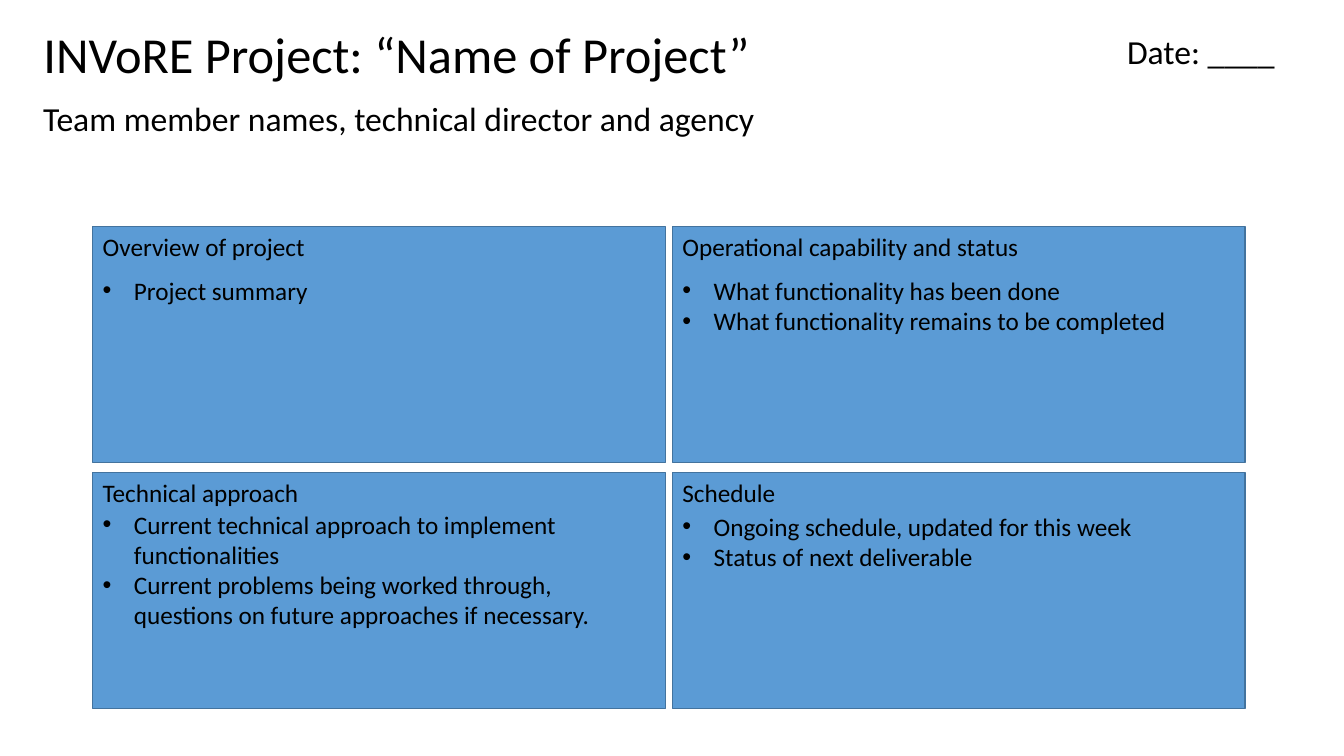
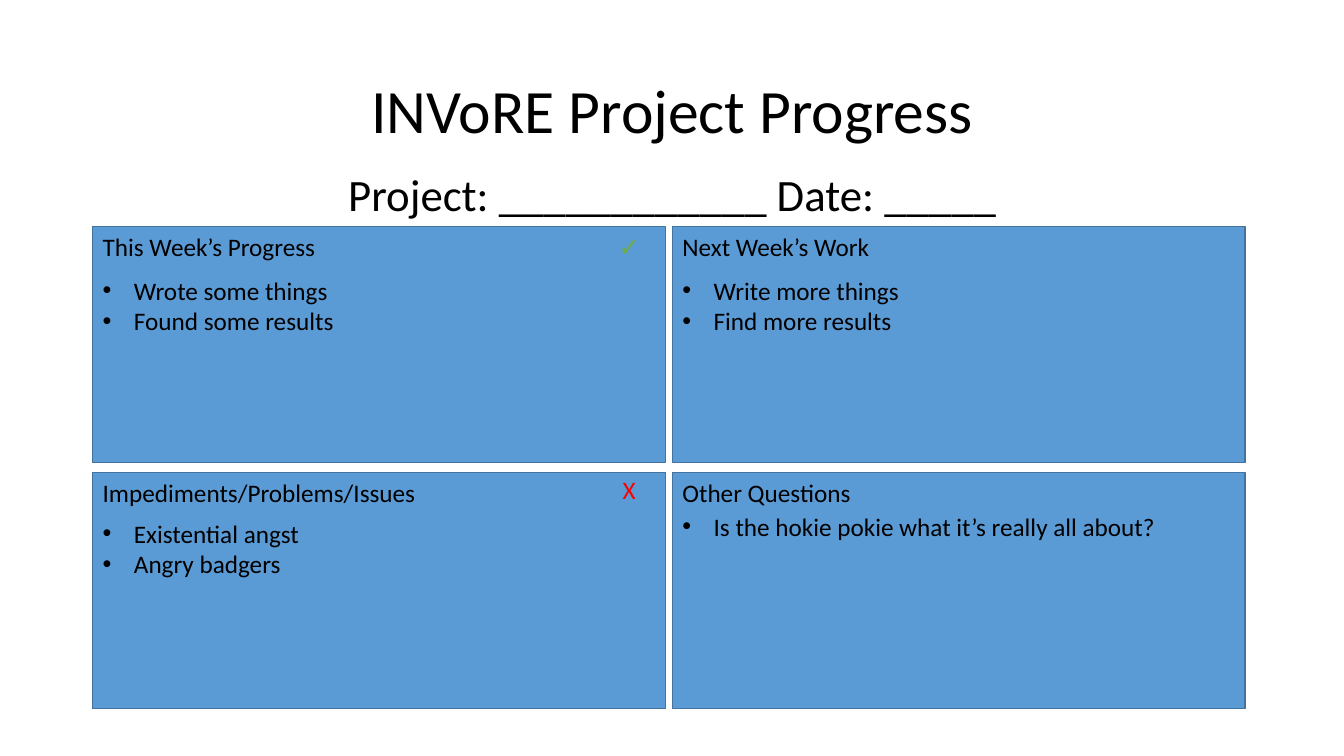
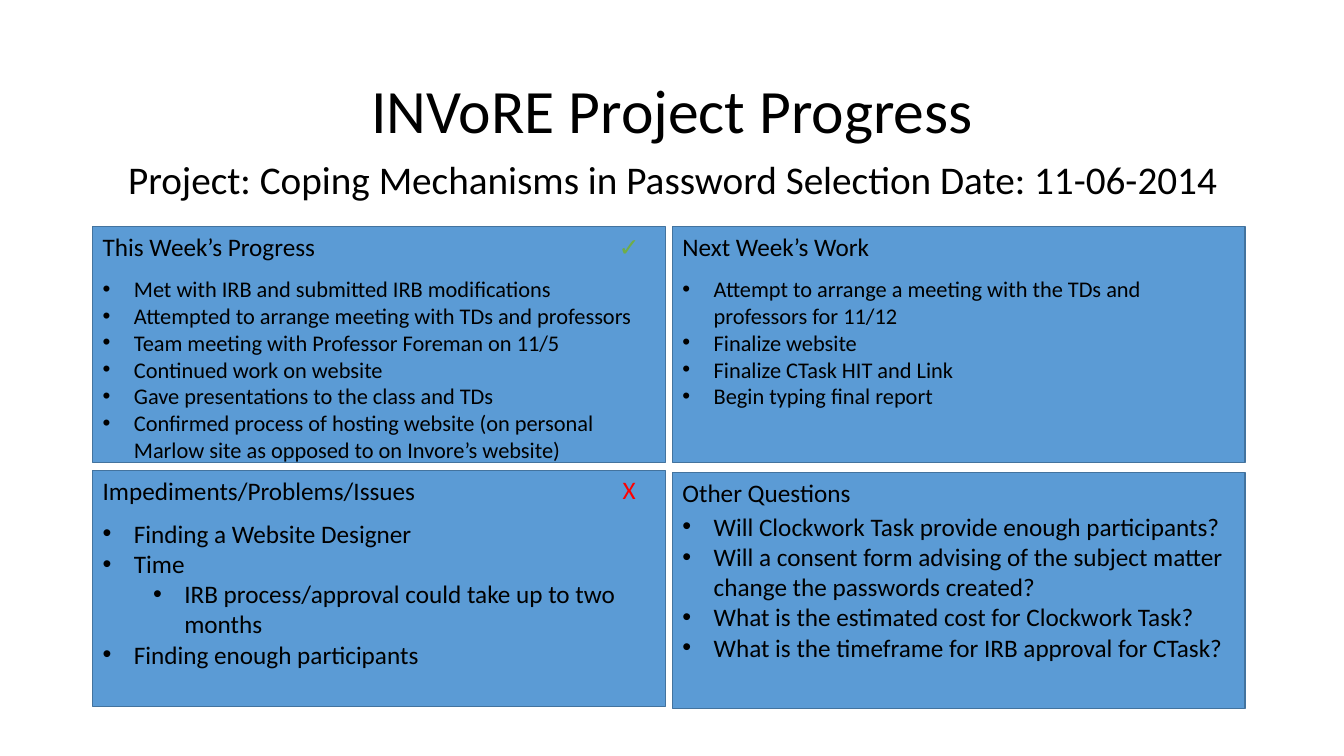
from dataclasses import dataclass
from typing import Any

import lxml.etree
import pptx
import pptx.dml.color
import pptx.enum.shapes
import pptx.enum.text
import pptx.oxml.ns
import pptx.util

Inches = pptx.util.Inches
Align = pptx.enum.text.PP_ALIGN
Anchor = pptx.enum.text.MSO_ANCHOR
AutoSize = pptx.enum.text.MSO_AUTO_SIZE


@dataclass(frozen=True)
class Theme:
    font: str = "Calibri"
    bullet_font: str = "Arial"
    ink: str = "000000"
    panel_fill: str = "5B9BD5"
    panel_line: str = "43739E"
    done: str = "70AD47"
    blocked: str = "FF0000"
    cover_title: int = 36
    title: int = 44
    cover_note: int = 24
    body: int = 18
    dense: int = 16
    line_width: int = 1


@dataclass(frozen=True)
class Frame:
    left: float
    top: float
    width: float
    height: float


@dataclass(frozen=True)
class Line:
    text: str
    size: int
    frame: Frame
    align: Align = Align.CENTER


@dataclass(frozen=True)
class Bullet:
    text: str
    level: int = 0


@dataclass(frozen=True)
class Panel:
    heading: str
    bullets: tuple[Bullet, ...]
    lines: int
    bullet_offset: float
    size: int = 18
    lift: float = 0


@dataclass(frozen=True)
class Mark:
    text: str
    color: str
    top: float


@dataclass(frozen=True)
class Report:
    title: Line
    subtitle: Line
    panels: tuple[Panel, ...]
    marks: tuple[Mark, ...] = ()
    date: str = ""


THEME = Theme()
GRID_LEFT, GRID_TOP = 0.92, 2.25
PANEL_WIDTH, PANEL_HEIGHT = 5.68, 2.34
COLUMN_STEP, ROW_STEP = 5.75, 2.44
HEADING_HEIGHT = 0.4
BULLET_INDENT, LEVEL_STEP = 0.31, 0.5
MARK_LEFT, MARK_WIDTH = 5.88, 0.72
LINE_RATIO = 1.21
DATE_FRAME = Frame(11.08, 0.26, 1.77, 0.5)
PROGRESS_TITLE = Line("INVoRE Project Progress", THEME.title, Frame(0.92, 0.4, 11.5, 1.45))
STATUS_MARKS = (Mark("X", THEME.blocked, 4.66), Mark("✓", THEME.done, GRID_TOP))


def rgb(value: str) -> pptx.dml.color.RGBColor:
    return pptx.dml.color.RGBColor.from_string(value)


def set_values(target: Any, values: dict[str, Any]) -> None:
    for name, value in values.items():
        setattr(target, name, value)


def box_values(frame: Frame) -> dict[str, Any]:
    return {name: Inches(getattr(frame, name)) for name in ("left", "top", "width", "height")}


def write(para: Any, text: str, size: int, color: str = THEME.ink) -> None:
    span = para.add_run()
    span.text = text
    set_values(span.font, {"name": THEME.font, "size": pptx.util.Pt(size)})
    span.font.color.rgb = rgb(color)


def add_box(shapes: Any, frame: Frame) -> Any:
    box = shapes.add_textbox(*box_values(frame).values())
    set_values(box.text_frame, {"word_wrap": True, "auto_size": AutoSize.SHAPE_TO_FIT_TEXT})
    return box


def add_text(
    shapes: Any, frame: Frame, text: str, size: int,
    color: str = THEME.ink, align: Align = Align.LEFT,
) -> None:
    para = add_box(shapes, frame).text_frame.paragraphs[0]
    para.alignment = align
    write(para, text, size, color)


def fill_heading(box: Any, line: Line) -> None:
    set_values(box, box_values(line.frame))
    set_values(box.text_frame, {
        "word_wrap": True,
        "auto_size": AutoSize.NONE,
        "vertical_anchor": Anchor.MIDDLE,
    })
    para = box.text_frame.paragraphs[0]
    set_values(para, {"alignment": line.align, "line_spacing": 0.9})
    write(para, line.text, line.size)


def set_bullet(para: Any, level: int) -> None:
    para.level = level
    properties = para._p.get_or_add_pPr()
    properties.set("marL", str(Inches(BULLET_INDENT + level * LEVEL_STEP)))
    properties.set("indent", str(-Inches(BULLET_INDENT)))
    for tag, name, value in (
        ("a:buFont", "typeface", THEME.bullet_font),
        ("a:buChar", "char", "•"),
    ):
        lxml.etree.SubElement(properties, pptx.oxml.ns.qn(tag)).set(name, value)


def add_panel(page: Any, panel: Panel, index: int) -> None:
    row, column = divmod(index, 2)
    left = GRID_LEFT + column * COLUMN_STEP
    top = GRID_TOP + row * ROW_STEP - panel.lift
    group = page.shapes.add_group_shape()
    card = group.shapes.add_shape(
        pptx.enum.shapes.MSO_SHAPE.RECTANGLE,
        *box_values(Frame(left, top, PANEL_WIDTH, PANEL_HEIGHT)).values(),
    )
    card.shadow.inherit = False
    card.fill.solid()
    card.fill.fore_color.rgb = rgb(THEME.panel_fill)
    card.line.color.rgb = rgb(THEME.panel_line)
    card.line.width = pptx.util.Pt(THEME.line_width)
    add_text(
        group.shapes, Frame(left, top, PANEL_WIDTH, HEADING_HEIGHT), panel.heading, THEME.body
    )
    height = 0.1 + panel.lines * panel.size * LINE_RATIO / 72
    box = add_box(page.shapes, Frame(left, top + panel.bullet_offset, PANEL_WIDTH, height))
    for position, bullet in enumerate(panel.bullets):
        text_frame = box.text_frame
        para = text_frame.add_paragraph() if position else text_frame.paragraphs[0]
        set_bullet(para, bullet.level)
        write(para, bullet.text, panel.size)


def add_report(deck: Any, report: Report) -> None:
    page = deck.slides.add_slide(deck.slide_layouts[5])
    fill_heading(page.shapes.title, report.title)
    subtitle = page.shapes.add_textbox(*box_values(report.subtitle.frame).values())
    fill_heading(subtitle, report.subtitle)
    for index, panel in enumerate(report.panels):
        add_panel(page, panel, index)
    for mark in report.marks:
        frame = Frame(MARK_LEFT, mark.top, MARK_WIDTH, HEADING_HEIGHT)
        add_text(page.shapes, frame, mark.text, THEME.body, mark.color, Align.CENTER)
    if report.date:
        add_text(page.shapes, DATE_FRAME, report.date, THEME.cover_note)


REPORTS = (
    Report(
        Line("INVoRE Project: “Name of Project”", THEME.cover_title,
             Frame(0.33, 0.17, 11.5, 0.8), Align.LEFT),
        Line("Team member names, technical director and agency", THEME.cover_note,
             Frame(0.33, 0.9, 11.5, 0.6), Align.LEFT),
        (
            Panel("Overview of project", (Bullet("Project summary"),), 1, 0.43),
            Panel("Operational capability and status", (
                Bullet("What functionality has been done"),
                Bullet("What functionality remains to be completed"),
            ), 2, 0.43),
            Panel("Technical approach", (
                Bullet("Current technical approach to implement functionalities"),
                Bullet("Current problems being worked through, "
                       "questions on future approaches if necessary."),
            ), 4, 0.31),
            Panel("Schedule", (
                Bullet("Ongoing schedule, updated for this week"),
                Bullet("Status of next deliverable"),
            ), 2, 0.33),
        ),
        date="Date: ____",
    ),
    Report(
        PROGRESS_TITLE,
        Line("Project: ____________ Date: _____", 32, Frame(0.92, 1.23, 11.5, 1.45)),
        (
            Panel("This Week’s Progress", (
                Bullet("Wrote some things"),
                Bullet("Found some results"),
            ), 2, 0.43),
            Panel("Next Week’s Work", (
                Bullet("Write more things"),
                Bullet("Find more results"),
            ), 2, 0.43),
            Panel("Impediments/Problems/Issues", (
                Bullet("Existential angst"),
                Bullet("Angry badgers"),
            ), 2, 0.4),
            Panel("Other Questions", (
                Bullet("Is the hokie pokie what it’s really all about?"),
            ), 1, 0.33),
        ),
        STATUS_MARKS,
    ),
    Report(
        PROGRESS_TITLE,
        Line("Project: Coping Mechanisms in Password Selection Date: 11-06-2014", 28,
             Frame(0.92, 1.08, 11.5, 1.45)),
        (
            Panel("This Week’s Progress", (
                Bullet("Met with IRB and submitted IRB modifications"),
                Bullet("Attempted to arrange meeting with TDs and professors"),
                Bullet("Team meeting with Professor Foreman on 11/5"),
                Bullet("Continued work on website"),
                Bullet("Gave presentations to the class and TDs"),
                Bullet("Confirmed process of hosting website (on personal "
                       "Marlow site as opposed to on Invore’s website)"),
            ), 7, 0.43, THEME.dense),
            Panel("Next Week’s Work", (
                Bullet("Attempt to arrange a meeting with the TDs and professors for 11/12"),
                Bullet("Finalize website"),
                Bullet("Finalize CTask HIT and Link"),
                Bullet("Begin typing final report"),
            ), 5, 0.43, THEME.dense),
            Panel("Impediments/Problems/Issues", (
                Bullet("Finding a Website Designer"),
                Bullet("Time"),
                Bullet("IRB process/approval could take up to two months", 1),
                Bullet("Finding enough participants"),
            ), 5, 0.42, lift=0.02),
            Panel("Other Questions", (
                Bullet("Will Clockwork Task provide enough participants?"),
                Bullet("Will a consent form advising of the subject matter "
                       "change the passwords created?"),
                Bullet("What is the estimated cost for Clockwork Task?"),
                Bullet("What is the timeframe for IRB approval for CTask?"),
            ), 5, 0.33),
        ),
        STATUS_MARKS,
    ),
)


def main() -> None:
    deck = pptx.Presentation()
    set_values(deck, {"slide_width": Inches(13.33), "slide_height": Inches(7.5)})
    for report in REPORTS:
        add_report(deck, report)
    deck.save("out.pptx")


if __name__ == "__main__":
    main()
